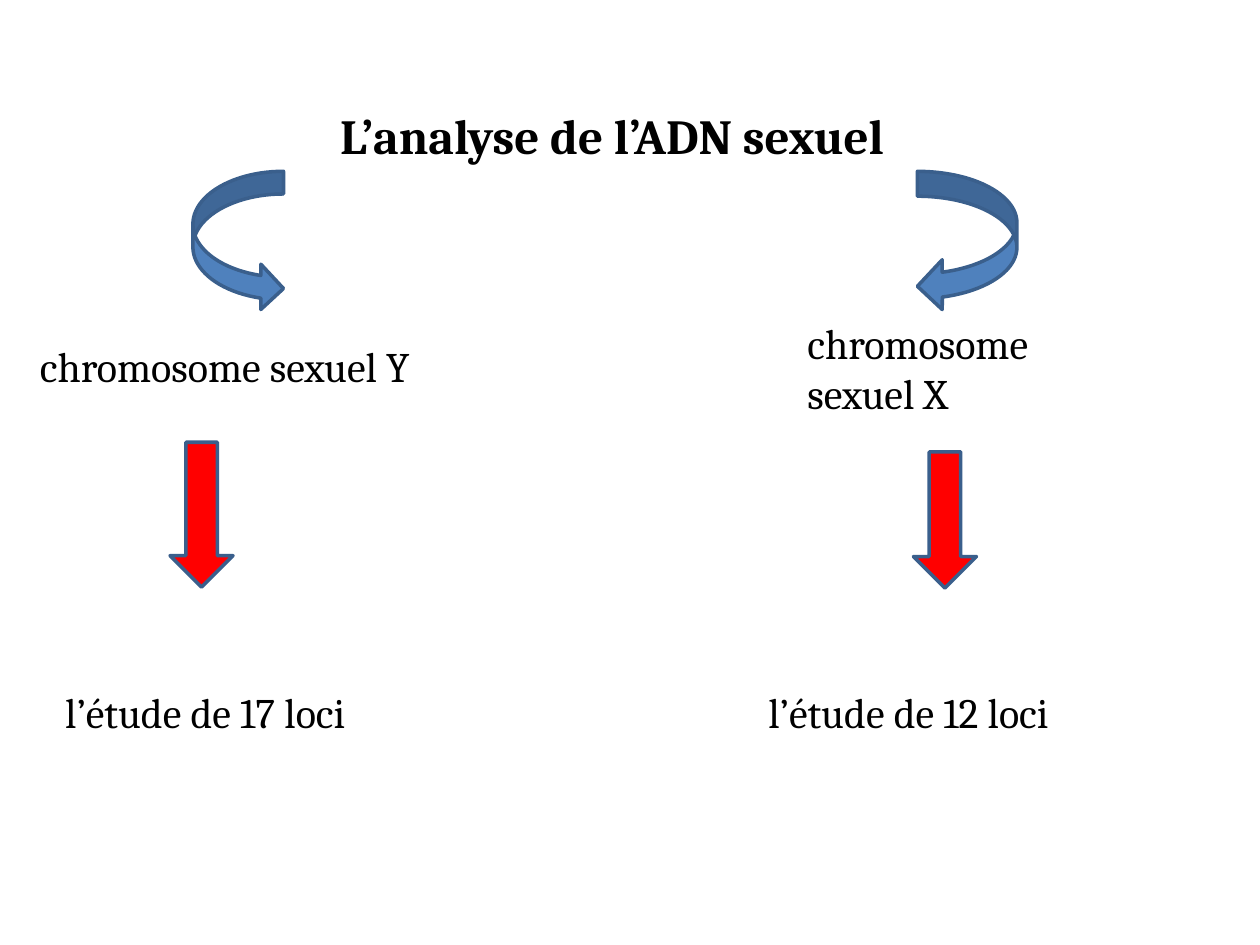
from dataclasses import dataclass

from pptx import Presentation
from pptx.dml.color import RGBColor
from pptx.enum.shapes import MSO_SHAPE
from pptx.enum.text import MSO_ANCHOR, MSO_AUTO_SIZE, PP_ALIGN
from pptx.util import Pt

DOWN_ARROW = MSO_SHAPE.DOWN_ARROW
CURVED_LEFT = MSO_SHAPE.CURVED_LEFT_ARROW
CURVED_RIGHT = MSO_SHAPE.CURVED_RIGHT_ARROW
ANCHOR_TOP = MSO_ANCHOR.TOP
ALIGN_LEFT = PP_ALIGN.LEFT
NO_AUTO_SIZE = MSO_AUTO_SIZE.NONE

TITLE_ONLY_LAYOUT = 5
FONT = "Cambria"
COLORS = {"text": "000000", "curve": "4F81BD", "down": "FF0000", "outline": "3A5F8C"}


@dataclass
class Box:
    left: float
    top: float
    width: float
    height: float


@dataclass
class Label:
    text: str
    box: Box


@dataclass
class Arrow:
    kind: MSO_SHAPE
    color: str
    box: Box


TITLE = Label("L’analyse de l’ADN sexuel", Box(187.2, 56.9, 360, 41))

LABELS = [
    Label("chromosome sexuel Y", Box(15.8, 190.8, 244, 36)),
    Label("chromosome sexuel X", Box(454.3, 177.8, 203.8, 65.5)),
    Label("l’étude de 17 loci", Box(30.2, 388.8, 215.3, 36)),
    Label("l’étude de 12 loci", Box(432, 388.8, 215.3, 36)),
]

ARROWS = [
    Arrow(CURVED_LEFT, "curve", Box(524.2, 97.9, 56.9, 79.9)),
    Arrow(CURVED_RIGHT, "curve", Box(110.2, 97.9, 51.8, 79.9)),
    Arrow(DOWN_ARROW, "down", Box(97.2, 252.7, 36, 82.8)),
    Arrow(DOWN_ARROW, "down", Box(522, 258.2, 36, 77.8)),
]


def lengths(box: Box) -> tuple[Pt, Pt, Pt, Pt]:
    return Pt(box.left), Pt(box.top), Pt(box.width), Pt(box.height)


def write_text(shape, text: str, size: float, bold: bool = False) -> None:
    frame = shape.text_frame
    frame.text = text
    frame.word_wrap = True
    frame.auto_size = NO_AUTO_SIZE
    frame.vertical_anchor = ANCHOR_TOP
    paragraph = frame.paragraphs[0]
    paragraph.alignment = ALIGN_LEFT
    paragraph.font.name = FONT
    paragraph.font.size = Pt(size)
    paragraph.font.bold = bold
    paragraph.font.color.rgb = RGBColor.from_string(COLORS["text"])


def add_title(slide, title: Label) -> None:
    shape = slide.shapes.title
    shape.left, shape.top, shape.width, shape.height = lengths(title.box)
    write_text(shape, title.text, 28, bold=True)


def add_label(slide, label: Label) -> None:
    write_text(slide.shapes.add_textbox(*lengths(label.box)), label.text, 24)


def add_arrow(slide, arrow: Arrow) -> None:
    shape = slide.shapes.add_shape(arrow.kind, *lengths(arrow.box))
    shape.shadow.inherit = False
    shape.fill.solid()
    shape.fill.fore_color.rgb = RGBColor.from_string(COLORS[arrow.color])
    shape.line.color.rgb = RGBColor.from_string(COLORS["outline"])
    shape.line.width = Pt(2)


def main() -> None:
    presentation = Presentation()
    presentation.slide_width = Pt(720)
    presentation.slide_height = Pt(540)
    slide = presentation.slides.add_slide(presentation.slide_layouts[TITLE_ONLY_LAYOUT])

    add_title(slide, TITLE)
    for label in LABELS:
        add_label(slide, label)
    for arrow in ARROWS:
        add_arrow(slide, arrow)

    presentation.save("out.pptx")


if __name__ == "__main__":
    main()
